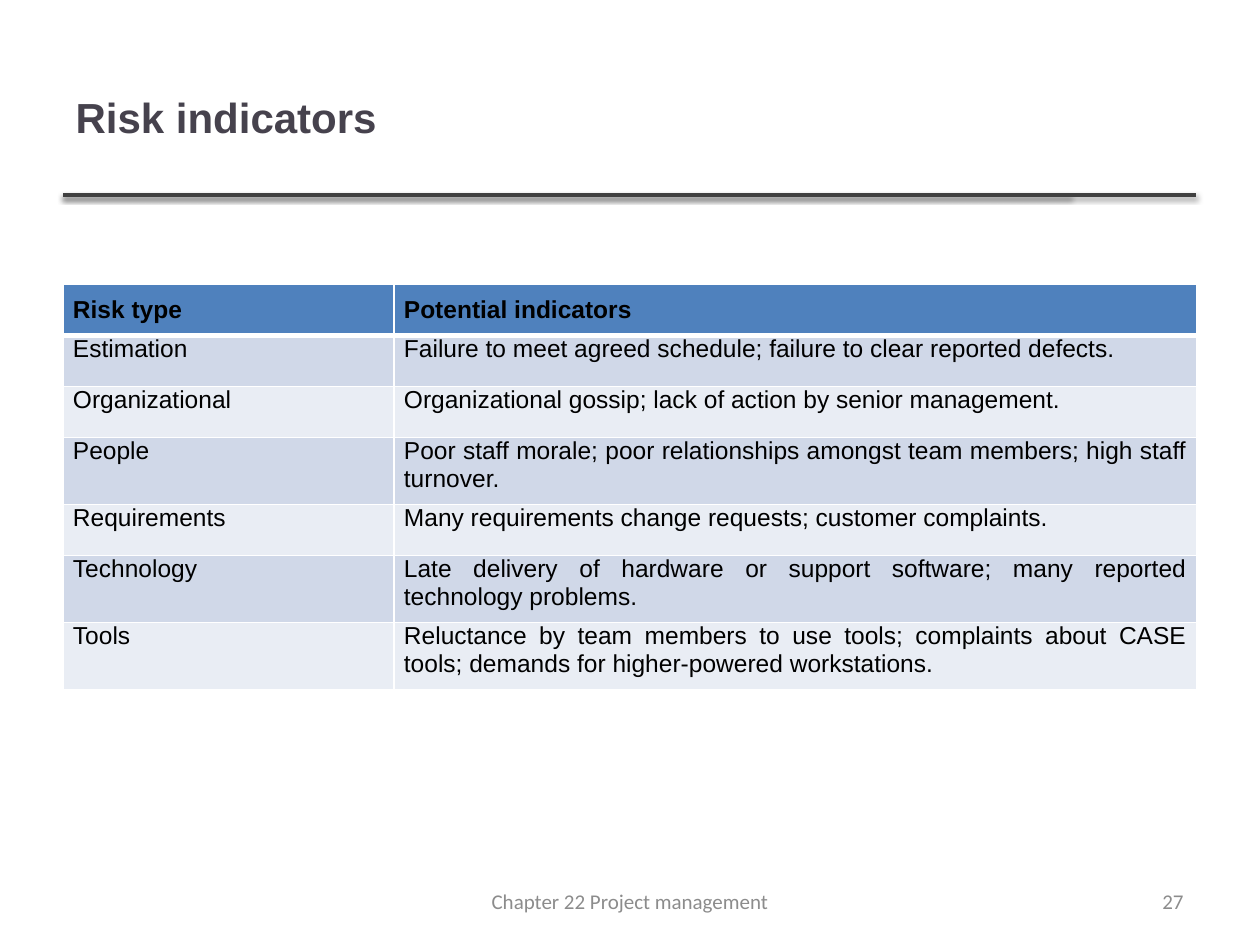
from lxml.etree import SubElement
from pptx import Presentation
from pptx.dml.color import RGBColor
from pptx.enum.shapes import MSO_CONNECTOR as Connector
from pptx.enum.text import MSO_ANCHOR as Anchor, PP_ALIGN as Align
from pptx.oxml.ns import qn
from pptx.util import Emu, Pt

PX = 914400 / 126

TITLE_INK = RGBColor(0x46, 0x42, 0x4D)
RULE = RGBColor(0x40, 0x40, 0x40)
BLACK = RGBColor(0x00, 0x00, 0x00)
WHITE = RGBColor(0xFF, 0xFF, 0xFF)
GREY = RGBColor(0x8C, 0x8C, 0x8C)
HEADER = RGBColor(0x4F, 0x81, 0xBD)
BANDS = [RGBColor(0xD0, 0xD8, 0xE8), RGBColor(0xE9, 0xED, 0xF4)]

RISKS = [
    ("Risk type", "Potential indicators"),
    ("Estimation", "Failure to meet agreed schedule; failure to clear reported defects."),
    ("Organizational", "Organizational gossip; lack of action by senior management."),
    ("People", "Poor staff morale; poor relationships amongst team members; "
               "high staff turnover."),
    ("Requirements", "Many requirements change requests; customer complaints."),
    ("Technology", "Late delivery of hardware or support software; "
                   "many reported technology problems."),
    ("Tools", "Reluctance by team members to use tools; complaints about CASE tools; "
              "demands for higher-powered workstations."),
]


def px(value):
    return Emu(round(value * PX))


class SlideBuilder:
    def __init__(self, presentation):
        self.slide = presentation.slides.add_slide(presentation.slide_layouts[5])

    def add_text(self, frame, text, size, color, align, font="Arial", bold=False):
        paragraph = frame.paragraphs[0]
        paragraph.alignment = align
        run = paragraph.add_run()
        run.text = text
        run.font.name, run.font.size, run.font.bold = font, Pt(size), bold
        run.font.color.rgb = color

    def title(self, text, left, top, width, height):
        shape = self.slide.shapes.title
        shape.left, shape.top = px(left), px(top)
        shape.width, shape.height = px(width), px(height)
        shape.text_frame.vertical_anchor = Anchor.MIDDLE
        self.add_text(shape.text_frame, text, 24, TITLE_INK, Align.LEFT, bold=True)

    def rule(self, left, right, y):
        line = self.slide.shapes.add_connector(
            Connector.STRAIGHT, px(left), px(y), px(right), px(y))
        line.line.color.rgb = RULE
        line.line.width = Pt(2)
        # Soft shadow below the line
        effects = SubElement(line._element.spPr, qn("a:effectLst"))
        shadow = SubElement(effects, qn("a:outerShdw"), blurRad="40000",
                            dist="20000", dir="5400000", rotWithShape="0")
        color = SubElement(shadow, qn("a:srgbClr"), val=str(BLACK))
        SubElement(color, qn("a:alpha"), val="38000")

    def borders(self, cell, top, bottom):
        properties = cell._tc.get_or_add_tcPr()
        for side, points in (("L", 1), ("R", 1), ("T", top), ("B", bottom)):
            line = SubElement(properties, qn(f"a:ln{side}"), w=str(Pt(points)))
            fill = SubElement(line, qn("a:solidFill"))
            SubElement(fill, qn("a:srgbClr"), val=str(WHITE))

    def table(self, rows, left, top, widths, row_height):
        table = self.slide.shapes.add_table(
            len(rows), len(widths), px(left), px(top),
            px(sum(widths)), px(row_height * len(rows))).table
        for column, width in zip(table.columns, widths):
            column.width = px(width)
        for index, texts in enumerate(rows):
            table.rows[index].height = px(row_height)
            header = index == 0
            for cell, text in zip(table.rows[index].cells, texts):
                self.borders(cell, 3 if index == 1 else 1, 3 if header else 1)
                cell.fill.solid()
                cell.fill.fore_color.rgb = HEADER if header else BANDS[(index - 1) % 2]
                cell.margin_left = cell.margin_right = px(10)
                cell.margin_top = px(12 if header else 0)
                cell.margin_bottom = px(12)
                self.add_text(cell.text_frame, text, 14, BLACK, Align.JUSTIFY, bold=header)

    def footer(self, text, left, width, align):
        frame = self.slide.shapes.add_textbox(
            px(left), px(876), px(width), px(50)).text_frame
        frame.word_wrap = True
        frame.vertical_anchor = Anchor.MIDDLE
        self.add_text(frame, text, 12, GREY, align, font="Calibri")


def main():
    presentation = Presentation()
    presentation.slide_width, presentation.slide_height = px(1260), px(945)
    builder = SlideBuilder(presentation)

    # Heading and its double rule
    for right in (1070, 1196):
        builder.rule(63, right, 195)
    builder.title("Risk indicators", 63, 38, 1006, 157)

    # Risk table
    builder.table(RISKS, 63, 284, [331, 803], 51)

    # Footer and slide number
    builder.footer("Chapter 22 Project management", 430, 400, Align.CENTER)
    builder.footer("27", 903, 293, Align.RIGHT)

    presentation.save("out.pptx")


if __name__ == "__main__":
    main()
